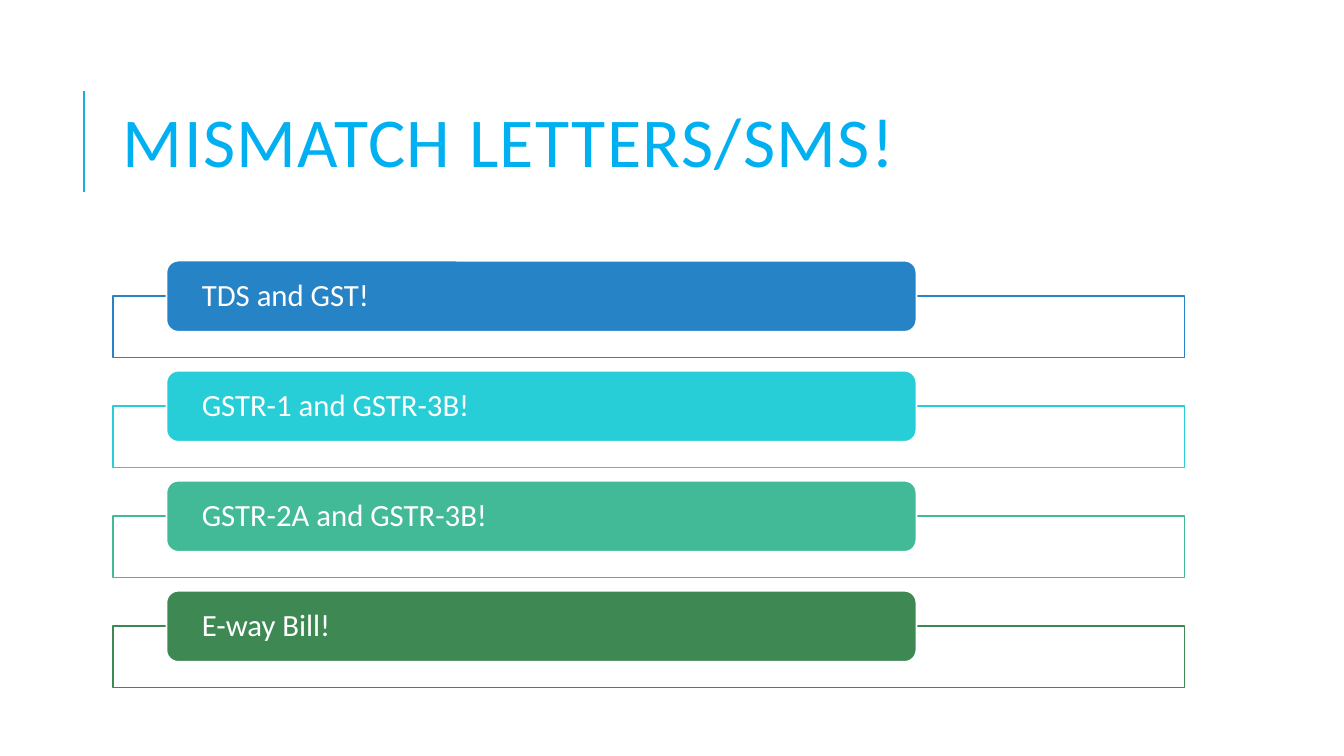
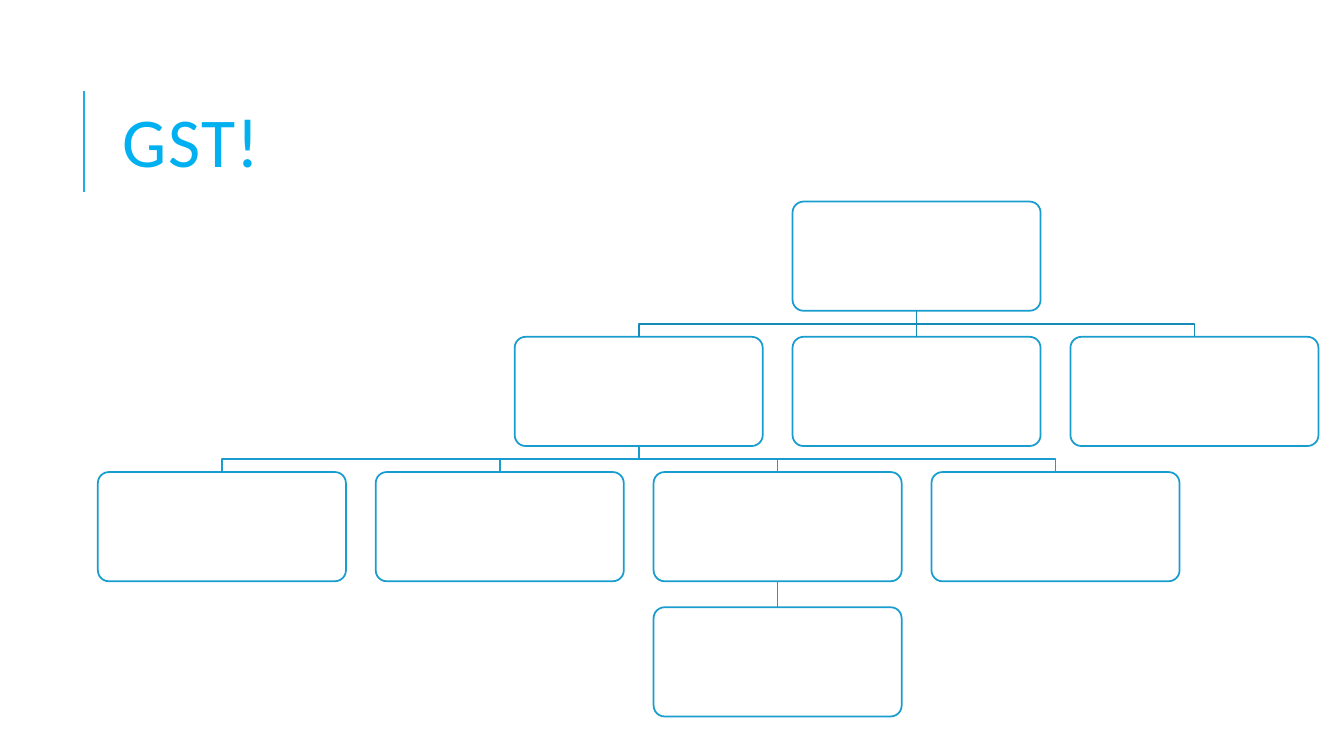
from dataclasses import dataclass
from typing import Optional

from lxml import etree
from pptx import Presentation
from pptx.dml.color import RGBColor
from pptx.enum import shapes as kinds, text as modes
from pptx.oxml.ns import qn
from pptx.util import Pt


@dataclass(frozen=True)
class Theme:
    font: str = "Calibri"
    title: str = "00B0F0"
    rule: str = "1CADE4"
    white: str = "FFFFFF"
    box: str = "199DCF"
    link: str = "168BB7"
    head: float = 50
    body: float = 22
    thin: float = 1.25
    thick: float = 1.5


@dataclass(frozen=True)
class Band:
    label: str
    tint: str


@dataclass(frozen=True)
class Node:
    col: float
    row: int
    boss: Optional[int] = None


THEME = Theme()
WIDE, HIGH = 960, 540
LEFT, SPAN = 80.64, 765.4
BANDS = [
    Band("TDS and GST!", "2683C6"),
    Band("GSTR-1 and GSTR-3B!", "27CED7"),
    Band("GSTR-2A and GSTR-3B!", "42BA97"),
    Band("E-way Bill!", "3E8853"),
]
NODES = [
    Node(2.5, 0),
    Node(1.5, 1, 0),
    Node(2.5, 1, 0),
    Node(3.5, 1, 0),
    Node(0, 2, 1),
    Node(1, 2, 1),
    Node(2, 2, 1),
    Node(3, 2, 1),
    Node(2, 3, 6),
]


def write(frame, words: str, *, size: float, tint: str, lead: float,
          space: float = 0, inset: float = 7.2) -> None:
    frame.word_wrap = True
    frame.auto_size = modes.MSO_AUTO_SIZE.NONE
    frame.vertical_anchor = modes.MSO_ANCHOR.MIDDLE
    frame.margin_left = frame.margin_right = Pt(inset)
    para = frame.paragraphs[0]
    para.alignment = modes.PP_ALIGN.LEFT
    para.line_spacing = lead
    run = para.add_run()
    run.text = words
    run.font.name = THEME.font
    run.font.size = Pt(size)
    run.font.color.rgb = RGBColor.from_string(tint)
    if space:
        run.font._element.set("spc", str(round(space * 100)))


def stroke(line, tint: str, width: float) -> None:
    line.color.rgb = RGBColor.from_string(tint)
    line.width = Pt(width)


def draw_box(slide, kind, left: float, top: float, width: float, height: float,
             *, fill: str, edge: str):
    box = slide.shapes.add_shape(kind, Pt(left), Pt(top), Pt(width), Pt(height))
    box.shadow.inherit = False
    box.fill.solid()
    box.fill.fore_color.rgb = RGBColor.from_string(fill)
    stroke(box.line, edge, THEME.thin)
    return box


def draw_line(slide, start: tuple, end: tuple, tint: str, width: float):
    line = slide.shapes.add_connector(
        kinds.MSO_CONNECTOR.STRAIGHT, *map(Pt, start), *map(Pt, end))
    stroke(line.line, tint, width)
    etree.SubElement(line.element.spPr, qn("a:effectLst"))
    return line


def draw_bend(slide, points: list, tint: str) -> None:
    first, *rest = [(Pt(x), Pt(y)) for x, y in points]
    pen = slide.shapes.build_freeform(*first)
    pen.add_line_segments(rest, close=False)
    bend = pen.convert_to_shape()
    bend.shadow.inherit = False
    bend.fill.background()
    stroke(bend.line, tint, THEME.thin)


def set_layout(layout, slide) -> None:
    spot = layout.placeholders[0]
    spot.left, spot.top = Pt(LEFT), Pt(46)
    spot.width, spot.height = Pt(SPAN), Pt(118)
    rule = draw_line(slide, (60, 137), (60, 65), THEME.rule, THEME.thick)
    layout.shapes.element.append(rule.element)


def set_title(slide, words: str) -> None:
    write(slide.shapes.title.text_frame, words, size=THEME.head,
          tint=THEME.title, lead=0.8, space=1)


def draw_bands(slide) -> None:
    for i, band in enumerate(BANDS):
        top = 186.2 + i * 78.6
        draw_box(slide, kinds.MSO_SHAPE.RECTANGLE, LEFT, top + 25.2, SPAN, 43.9,
                 fill=THEME.white, edge=band.tint)
        pill = draw_box(slide, kinds.MSO_SHAPE.ROUNDED_RECTANGLE, 118.9, top,
                        535.7, 50.8, fill=band.tint, edge=THEME.white)
        write(pill.text_frame, band.label, size=THEME.body, tint=THEME.white,
              lead=0.9, inset=22.8)


def draw_tree(slide) -> None:
    width, height, across, down = 177.2, 78, 198.48, 96.6
    boxes = []

    def place(node: Node) -> tuple:
        return 69.9 + node.col * across, 144 + node.row * down

    for node in NODES:
        left, top = place(node)
        box = draw_box(slide, kinds.MSO_SHAPE.ROUNDED_RECTANGLE, left, top,
                       width, height, fill=THEME.white, edge=THEME.box)
        box.adjustments[0] = 0.1
        boxes.append(box)

    for node, box in zip(NODES, boxes):
        if node.boss is None:
            continue
        boss = NODES[node.boss]
        left, top = place(node)
        over, base = place(boss)
        start = (over + width / 2, base + height)
        end = (left + width / 2, top)
        tint = THEME.link if boss.row == 0 else THEME.box
        if node.col == boss.col:
            line = draw_line(slide, start, end, tint, THEME.thin)
            line.begin_connect(boxes[node.boss], 2)
            line.end_connect(box, 0)
        else:
            mid = (start[1] + end[1]) / 2
            draw_bend(slide, [start, (start[0], mid), (end[0], mid), end], tint)


def main() -> None:
    deck = Presentation()
    deck.slide_width, deck.slide_height = Pt(WIDE), Pt(HIGH)
    layout = deck.slide_layouts[5]
    pages = [("MISMATCH LETTERS/SMS!", draw_bands), ("GST!", draw_tree)]
    for i, (words, draw) in enumerate(pages):
        slide = deck.slides.add_slide(layout)
        if i == 0:
            set_layout(layout, slide)
        set_title(slide, words)
        draw(slide)
    deck.save("out.pptx")


if __name__ == "__main__":
    main()
